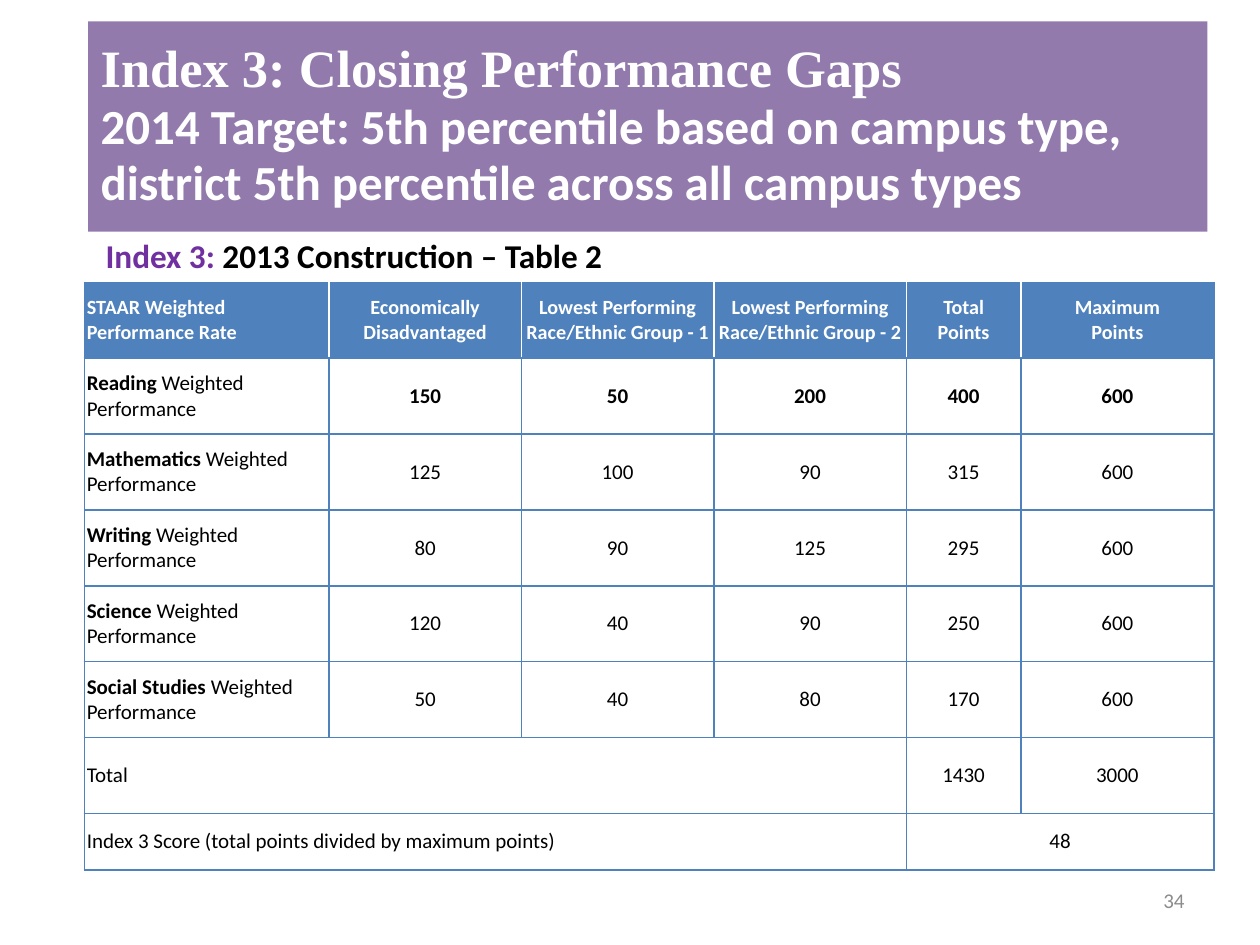
from dataclasses import dataclass
from typing import Any

from lxml.etree import SubElement
from pptx import Presentation
from pptx.dml.color import RGBColor
from pptx.enum.shapes import MSO_SHAPE
from pptx.enum.text import MSO_ANCHOR, PP_ALIGN
from pptx.oxml.ns import qn
from pptx.util import Cm, Pt


@dataclass(frozen=True)
class Theme:
    white: str = "FFFFFF"
    black: str = "000000"
    blue: str = "4F81BD"
    banner: str = "927AAD"
    purple: str = "7030A0"
    grey: str = "8C8C8C"
    sans: str = "Calibri"
    serif: str = "Times New Roman"
    title_size: float = 30
    target_size: float = 28
    caption_size: float = 19
    header_size: float = 11.5
    body_size: float = 12
    title_leading: float = 32
    border: float = 1


THEME = Theme()


@dataclass(frozen=True)
class Span:
    text: str
    size: float = THEME.body_size
    color: str = THEME.black
    bold: bool = False
    font: str = THEME.sans


@dataclass(frozen=True)
class Box:
    left: float
    top: float
    width: float
    height: float

    def lengths(self) -> list[Cm]:
        return [Cm(n) for n in (self.left, self.top, self.width, self.height)]


@dataclass(frozen=True)
class Subject:
    name: str
    points: tuple[int, int, int]
    bold: bool = False


@dataclass(frozen=True)
class CellStyle:
    padding: float
    align: PP_ALIGN = PP_ALIGN.CENTER
    fill: str | None = None
    left: str = THEME.blue
    right: str = THEME.blue


NARROW, WIDE = 0.05, 0.18
COLUMN_WIDTHS = [4.93, 3.88, 3.88, 3.88, 2.31, 3.89]
ROW_HEIGHTS = [1.53] * 7 + [1.14]
HEADINGS = [
    "STAAR Weighted Performance Rate",
    "Economically Disadvantaged",
    "Lowest Performing Race/Ethnic Group - 1",
    "Lowest Performing Race/Ethnic Group - 2",
    "Total Points",
    "Maximum\nPoints",
]
SUBJECTS = [
    Subject("Reading", (150, 50, 200), bold=True),
    Subject("Mathematics", (125, 100, 90)),
    Subject("Writing", (80, 90, 125)),
    Subject("Science", (120, 40, 90)),
    Subject("Social Studies", (50, 40, 80)),
]
MAXIMUM = 600


def apply_format(target: Any, values: dict[str, Any]) -> None:
    for attribute, value in values.items():
        setattr(target, attribute, value)


def write_paragraph(paragraph: Any, spans: list[Span], align: PP_ALIGN) -> None:
    """Write spans in one paragraph; a newline in a span is a line break."""
    paragraph.alignment = align
    for span in spans:
        for number, line in enumerate(span.text.split("\n")):
            if number:
                paragraph.add_line_break()
            run = paragraph.add_run()
            run.text = line
            apply_format(run.font, {"size": Pt(span.size), "bold": span.bold, "name": span.font})
            run.font.color.rgb = RGBColor.from_string(span.color)


def write_frame(frame: Any, paragraphs: list[list[Span]], align: PP_ALIGN = PP_ALIGN.LEFT) -> None:
    apply_format(frame, {"word_wrap": True, "vertical_anchor": MSO_ANCHOR.MIDDLE})
    for number, spans in enumerate(paragraphs):
        paragraph = frame.add_paragraph() if number else frame.paragraphs[0]
        write_paragraph(paragraph, spans, align)


def style_cell(cell: Any, style: CellStyle) -> None:
    properties = cell._tc.get_or_add_tcPr()
    edges = {"lnL": style.left, "lnR": style.right, "lnT": THEME.blue, "lnB": THEME.blue}
    for edge, color in edges.items():
        line = SubElement(properties, qn(f"a:{edge}"), w=str(Pt(THEME.border)))
        SubElement(SubElement(line, qn("a:solidFill")), qn("a:srgbClr"), val=color)
    if style.fill:
        cell.fill.solid()
        cell.fill.fore_color.rgb = RGBColor.from_string(style.fill)
    else:
        cell.fill.background()
    apply_format(cell, {
        "margin_left": Cm(style.padding), "margin_right": Cm(style.padding),
        "margin_top": 0, "margin_bottom": 0, "vertical_anchor": MSO_ANCHOR.MIDDLE,
    })


def column_align(column: int) -> PP_ALIGN:
    return PP_ALIGN.CENTER if column else PP_ALIGN.LEFT


def add_header(table: Any) -> None:
    last = len(HEADINGS) - 1
    for column, heading in enumerate(HEADINGS):
        cell = table.cell(0, column)
        style_cell(cell, CellStyle(
            padding=NARROW if column < 4 else WIDE,
            fill=THEME.blue,
            left=THEME.white if column else THEME.blue,
            right=THEME.white if column < last else THEME.blue,
        ))
        lines = [[Span(line, THEME.header_size, THEME.white, True)] for line in heading.split("\n")]
        write_frame(cell.text_frame, lines, column_align(column))


def add_body(table: Any) -> None:
    rows: list[dict[int, list[Span]]] = []
    for subject in SUBJECTS:
        label = [Span(f"{subject.name} ", bold=True), Span("Weighted \nPerformance")]
        numbers = [*subject.points, sum(subject.points), MAXIMUM]
        values = [[Span(str(number), bold=subject.bold)] for number in numbers]
        rows.append(dict(enumerate([label, *values])))
    total = sum(sum(subject.points) for subject in SUBJECTS)
    maximum = MAXIMUM * len(SUBJECTS)
    rows.append({0: [Span("Total")], 4: [Span(str(total))], 5: [Span(str(maximum))]})
    score = [Span(str(round(100 * total / maximum)))]
    rows.append({0: [Span("Index 3 Score (total points divided by maximum points)")], 4: score})

    for row, contents in enumerate(rows, start=1):
        for column in range(len(COLUMN_WIDTHS)):
            cell = table.cell(row, column)
            style_cell(cell, CellStyle(padding=NARROW if column < 3 else WIDE))
            if column in contents:
                write_frame(cell.text_frame, [contents[column]], column_align(column))
    total_row, score_row = len(rows) - 1, len(rows)
    for row, first, last in [(total_row, 0, 3), (score_row, 0, 3), (score_row, 4, 5)]:
        table.cell(row, first).merge(table.cell(row, last))


def add_points_table(slide: Any) -> None:
    box = Box(1.7, 5.69, sum(COLUMN_WIDTHS), sum(ROW_HEIGHTS))
    table = slide.shapes.add_table(len(ROW_HEIGHTS), len(COLUMN_WIDTHS), *box.lengths()).table
    apply_format(table, {"first_row": False, "horz_banding": False})
    for column, width in zip(table.columns, COLUMN_WIDTHS):
        column.width = Cm(width)
    for row, height in zip(table.rows, ROW_HEIGHTS):
        row.height = Cm(height)
    add_header(table)
    add_body(table)


def add_text(slide: Any, box: Box, spans: list[Span], align: PP_ALIGN = PP_ALIGN.LEFT) -> None:
    write_frame(slide.shapes.add_textbox(*box.lengths()).text_frame, [spans], align)


def add_banner(slide: Any) -> None:
    banner = slide.shapes.add_shape(MSO_SHAPE.RECTANGLE, *Box(1.78, 0.43, 22.56, 4.24).lengths())
    banner.shadow.inherit = False
    banner.fill.solid()
    banner.fill.fore_color.rgb = RGBColor.from_string(THEME.banner)
    banner.line.fill.background()
    title = Span("Index 3: Closing Performance Gaps", THEME.title_size, THEME.white, True, THEME.serif)
    target = Span(
        "2014 Target: 5th percentile based on campus type, "
        "district 5th percentile across all campus types",
        THEME.target_size, THEME.white, True,
    )
    write_frame(banner.text_frame, [[title], [target]])
    for paragraph in banner.text_frame.paragraphs:
        paragraph.line_spacing = Pt(THEME.title_leading)


def main() -> None:
    presentation = Presentation()
    apply_format(presentation, {"slide_width": Cm(25.4), "slide_height": Cm(19.05)})
    slide = presentation.slides.add_slide(presentation.slide_layouts[6])
    add_points_table(slide)
    add_text(slide, Box(18.2, 17.65, 5.93, 1.01), [Span("34", color=THEME.grey)], PP_ALIGN.RIGHT)
    add_text(slide, Box(1.88, 4.62, 16.89, 1.07), [
        Span("Index 3: ", THEME.caption_size, THEME.purple, True),
        Span("2013 Construction – Table 2", THEME.caption_size, bold=True),
    ])
    add_banner(slide)
    presentation.save("out.pptx")


if __name__ == "__main__":
    main()
